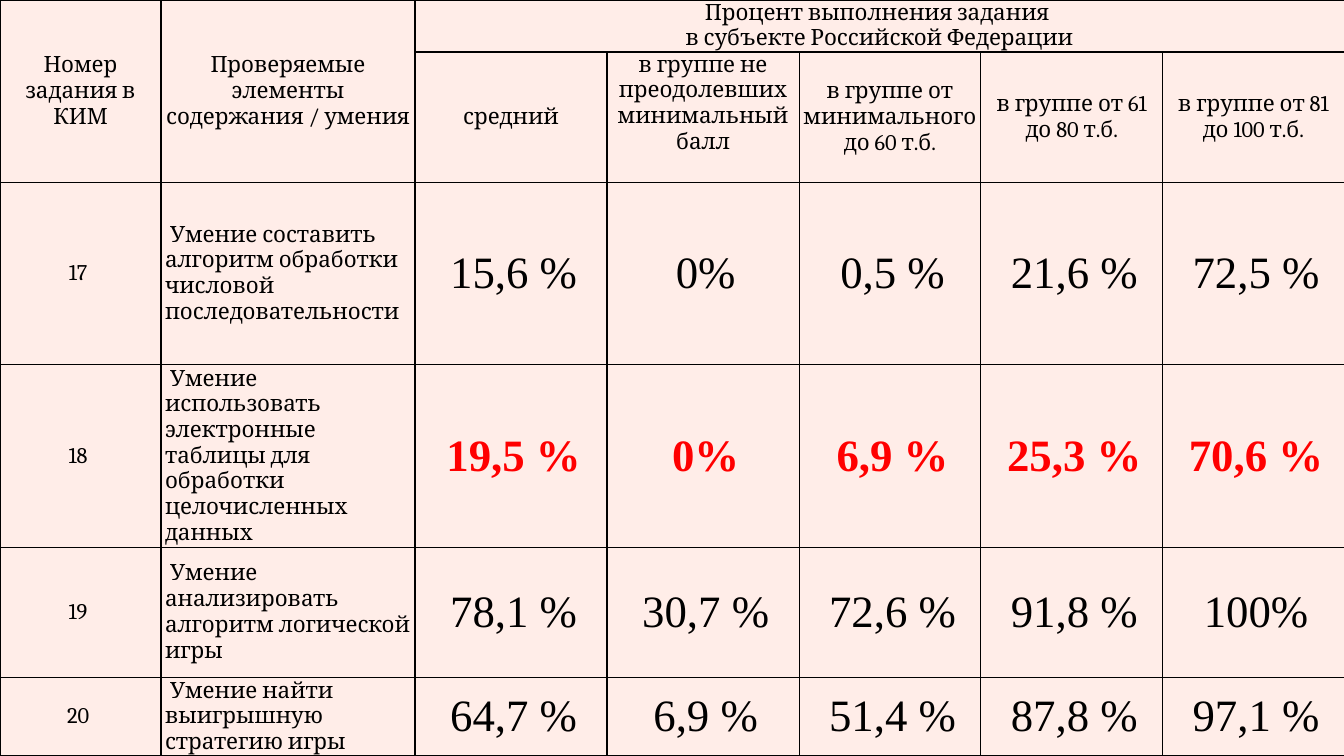
from lxml import etree
from pptx import Presentation
from pptx.dml.color import RGBColor
from pptx.enum.text import MSO_ANCHOR, PP_ALIGN
from pptx.oxml.ns import qn
from pptx.util import Cm, Pt

TOP, MIDDLE = MSO_ANCHOR.TOP, MSO_ANCHOR.MIDDLE
LEFT, CENTER = PP_ALIGN.LEFT, PP_ALIGN.CENTER

COLORS = {"cell": "FFEDE8", "text": "000000", "weak": "FF0000", "border": "000000"}
COLUMN_WIDTHS = [4.06, 6.4, 4.84, 4.84, 4.58, 4.58, 4.58]
ROW_HEIGHTS = [1.31, 3.28, 4.6, 4.6, 3.28, 1.98]

MAIN_HEADINGS = [
    "Номер\nзадания в КИМ",
    "Проверяемые элементы содержания / умения",
    "Процент выполнения задания \vв субъекте Российской Федерации",
]
GROUPS = [
    "средний",
    "в группе не преодолевших минимальный балл",
    "в группе от минимального до 60 т.б.",
    "в группе от 61 до 80 т.б.",
    "в группе от 81 до 100 т.б.",
]
TASKS = [
    ("17 ", "Умение составить алгоритм обработки числовой последовательности",
     ["15,6 %", "0%", "0,5 %", "21,6 %", "72,5 %"]),
    ("18 ", "Умение использовать электронные таблицы для обработки целочисленных данных",
     ["19,5 %", "0%", "6,9 %", "25,3 %", "70,6 %"]),
    ("19 ", "Умение анализировать алгоритм логической игры",
     ["78,1 %", "30,7 %", "72,6 %", "91,8 %", "100%"]),
    ("20 ", "Умение найти выигрышную стратегию игры",
     ["64,7 %", "6,9 %", "51,4 %", "87,8 %", "97,1 %"]),
]
WEAK_TASK = "18 "


class TablePage:
    label_font, label_size = "Cambria", 16
    value_font, value_size = "Times New Roman", 32
    first_line_indent = Cm(0.13)

    def __init__(self, deck):
        self.page = deck.slides.add_slide(deck.slide_layouts[6])

    def add_table(self, widths, heights):
        frame = self.page.shapes.add_table(
            len(heights), len(widths), 0, 0, Cm(sum(widths)), Cm(sum(heights)))
        self.table = frame.table
        self.table.horz_banding = False
        for column, width in zip(self.table.columns, widths):
            column.width = Cm(width)
        for row, height in zip(self.table.rows, heights):
            row.height = Cm(height)
        for cell in self.table.iter_cells():
            self.style_cell(cell)

    def style_cell(self, cell):
        cell.margin_left = cell.margin_right = Cm(0.1)
        cell.margin_top = cell.margin_bottom = 0
        properties = cell._tc.get_or_add_tcPr()
        for side in ("a:lnL", "a:lnR", "a:lnT", "a:lnB"):
            line = etree.SubElement(properties, qn(side), w=str(Pt(1)))
            fill = etree.SubElement(line, qn("a:solidFill"))
            etree.SubElement(fill, qn("a:srgbClr"), val=COLORS["border"])
        cell.fill.solid()
        cell.fill.fore_color.rgb = RGBColor.from_string(COLORS["cell"])

    def merge_cells(self, first, last):
        self.table.cell(*first).merge(self.table.cell(*last))

    def fill_cell(self, row, column, text, font, size, align=CENTER, anchor=MIDDLE,
                  indent=False, weak=False):
        cell = self.table.cell(row, column)
        cell.text_frame.text = text
        cell.vertical_anchor = anchor
        for para in cell.text_frame.paragraphs:
            para.alignment = align
            if indent:
                para._p.get_or_add_pPr().set("indent", str(self.first_line_indent))
            for span in para.runs:
                span.font.name = font
                span.font.size = Pt(size)
                span.font.bold = weak
                color = COLORS["weak" if weak else "text"]
                span.font.color.rgb = RGBColor.from_string(color)

    def add_label(self, row, column, text, **layout):
        self.fill_cell(row, column, text, self.label_font, self.label_size, **layout)

    def add_value(self, row, column, text, weak):
        self.fill_cell(row, column, text, self.value_font, self.value_size,
                       indent=True, weak=weak)


def main():
    deck = Presentation()
    deck.slide_width, deck.slide_height = Cm(33.87), Cm(19.05)
    page = TablePage(deck)
    page.add_table(COLUMN_WIDTHS, ROW_HEIGHTS)

    page.merge_cells((0, 0), (1, 0))
    page.merge_cells((0, 1), (1, 1))
    page.merge_cells((0, 2), (0, 6))
    for column, heading in enumerate(MAIN_HEADINGS):
        page.add_label(0, column, heading, anchor=TOP if column == 2 else MIDDLE)
    for column, group in enumerate(GROUPS, start=2):
        page.add_label(1, column, group, anchor=TOP if column == 3 else MIDDLE)

    for row, (number, skill, values) in enumerate(TASKS, start=2):
        page.add_label(row, 0, number)
        page.add_label(row, 1, skill, align=LEFT, indent=True)
        for column, value in enumerate(values, start=2):
            page.add_value(row, column, value, weak=number == WEAK_TASK)

    deck.save("out.pptx")


if __name__ == "__main__":
    main()
